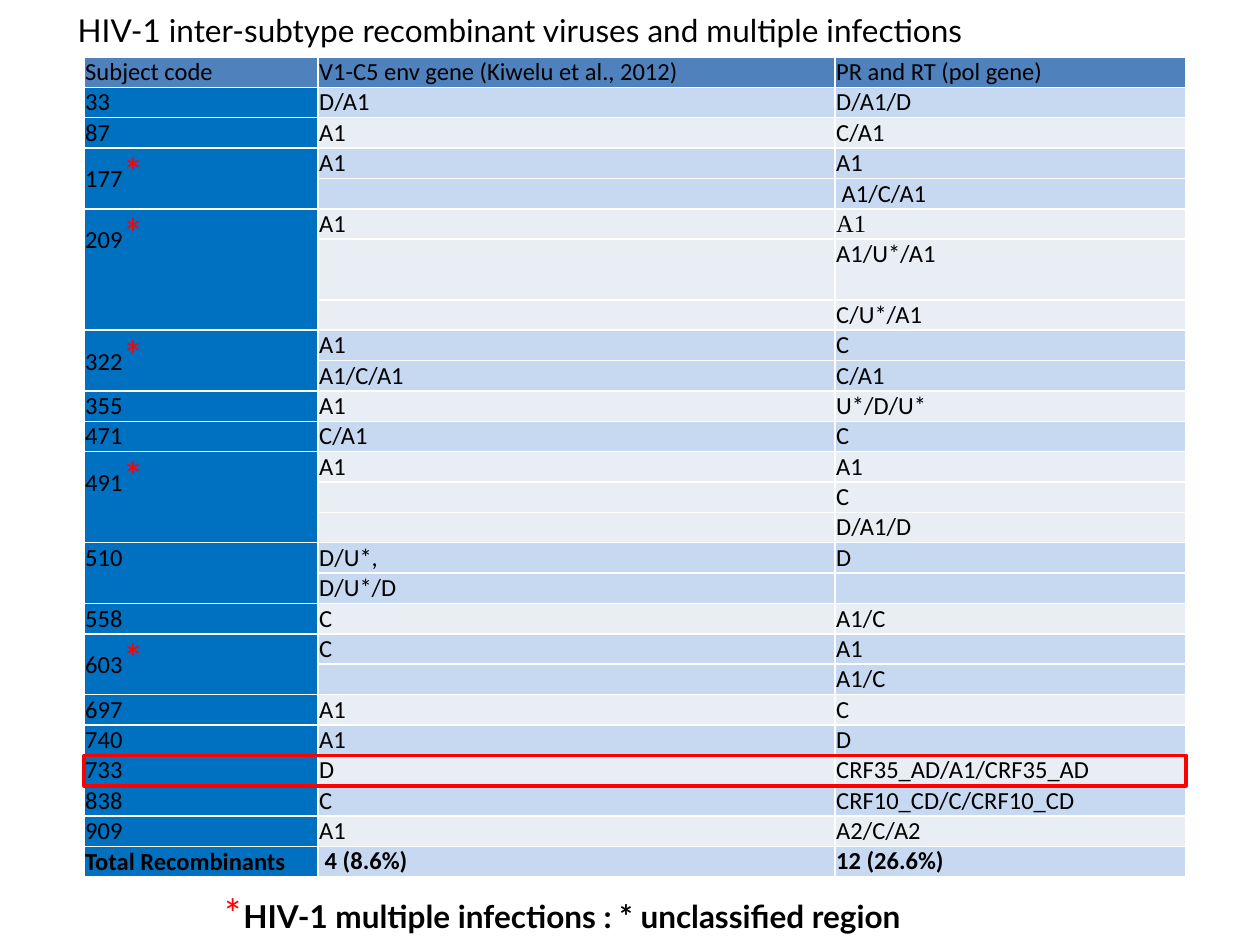
from dataclasses import dataclass
from lxml.etree import SubElement
from pptx import Presentation
from pptx.dml.color import RGBColor as RGB
from pptx.enum.shapes import MSO_SHAPE as SHAPE
from pptx.enum.text import MSO_ANCHOR as ANCHOR, MSO_AUTO_SIZE as FIT, PP_ALIGN as ALIGN
from pptx.oxml.ns import qn
from pptx.util import Emu, Inches, Pt

# Content: subject, starred as a multiple infection, (env, pol) rows
TITLE = "HIV-1 inter-subtype recombinant viruses and multiple infections"
NOTE = "HIV-1 multiple infections : * unclassified region"
HEAD = ("Subject code", "V1-C5 env gene (Kiwelu et al., 2012)", "PR and RT (pol gene)")
SUBJECTS = [
    ("33", False, [("D/A1", "D/A1/D")]),
    ("87", False, [("A1", "C/A1")]),
    ("177", True, [("A1", "A1"), ("", " A1/C/A1")]),
    ("209", True, [("A1", "A1"), ("", "A1/U*/A1"), ("", "C/U*/A1")]),
    ("322", True, [("A1", "C"), ("A1/C/A1", "C/A1")]),
    ("355", False, [("A1", "U*/D/U*")]),
    ("471", False, [("C/A1", "C")]),
    ("491", True, [("A1", "A1"), ("", "C"), ("", "D/A1/D")]),
    ("510", False, [("D/U*,", "D"), ("D/U*/D", "")]),
    ("558", False, [("C", "A1/C")]),
    ("603", True, [("C", "A1"), ("", "A1/C")]),
    ("697", False, [("A1", "C")]),
    ("740", False, [("A1", "D")]),
    ("733", False, [("D", "CRF35_AD/A1/CRF35_AD")]),
    ("838", False, [("C", "CRF10_CD/C/CRF10_CD")]),
    ("909", False, [("A1", "A2/C/A2")]),
    ("Total Recombinants", False, [(" 4 (8.6%)", "12 (26.6%)")]),
]
MARKED = "733"  # subject with a frame around it
TALL = 6        # row of double height
SERIF = (5, 2)  # cell set in the serif font


@dataclass(frozen=True)
class Theme:
    ink: str = "000000"
    red: str = "FF0000"
    rule: str = "FFFFFF"
    head: str = "4F81BD"
    code: str = "0070C0"
    bands: tuple = ("C6D9F1", "E9EDF4")
    font: str = "Calibri"
    lead: str = "Lato"
    serif: str = "Times New Roman"
    cell: int = 14
    text: int = 18
    star: int = 24


T = Theme()
LEFT, TOP, WIDTH, HEIGHT = 84, 57, 1102, 820
COLS = (234, 517, 351)


def px(n):
    return Emu(n * 914400 // 126)


def box(*sides):
    return [px(n) for n in sides]


def add_run(para, text, size, font=T.font, color=T.ink, bold=False):
    run = para.add_run()
    run.text = text
    face = run.font
    face.size, face.name, face.bold = Pt(size), font, bold
    face.color.rgb = RGB.from_string(color)


def style(cell, fill):
    """Set margins, borders, fill and the line height of an empty cell."""
    cell.margin_left = cell.margin_right = Inches(0.01)
    cell.margin_top = cell.margin_bottom = 0
    cell.vertical_anchor = ANCHOR.MIDDLE
    props = cell._tc.get_or_add_tcPr()
    for side in "LRTB":
        line = SubElement(props, qn(f"a:ln{side}"), w=str(Pt(1)))
        solid = SubElement(line, qn("a:solidFill"))
        SubElement(solid, qn("a:srgbClr"), val=T.rule)
    cell.fill.solid()
    cell.fill.fore_color.rgb = RGB.from_string(fill)
    end = cell.text_frame.paragraphs[0]._p.get_or_add_endParaRPr()
    end.set("sz", str(T.cell * 100))


def write(cell, text, **look):
    if text:
        add_run(cell.text_frame.paragraphs[0], text, T.cell, **look)


def add_grid(slide):
    """Build the table; return the top and height of the marked row."""
    count = 1 + sum(len(rows) for _, _, rows in SUBJECTS)
    frame = slide.shapes.add_table(count, len(COLS), *box(LEFT, TOP, WIDTH, HEIGHT))
    grid = frame.table
    grid.first_row = grid.horz_banding = False
    for col, wide in zip(grid.columns, COLS):
        col.width = px(wide)
    unit = px(HEIGHT) // (count + 1)
    highs = [unit * 2 if i == TALL else unit for i in range(count)]
    for row, high in zip(grid.rows, highs):
        row.height = Emu(high)

    # Header
    for c, text in enumerate(HEAD):
        style(grid.cell(0, c), T.head)
        write(grid.cell(0, c), text)

    # One band per subject
    r = 1
    for n, (code, star, rows) in enumerate(SUBJECTS):
        last = n == len(SUBJECTS) - 1
        first = grid.cell(r, 0)
        for i, pair in enumerate(rows, r):
            style(grid.cell(i, 0), T.code)
            for c, text in enumerate(pair, 1):
                cell = grid.cell(i, c)
                style(cell, T.bands[n % 2])
                write(cell, text, bold=last, font=T.serif if (i, c) == SERIF else T.font)
                if i == TALL:
                    cell.vertical_anchor = ANCHOR.TOP
        write(first, code, bold=last)
        if star:
            add_run(first.text_frame.paragraphs[0], "*", T.star, color=T.red)
        if len(rows) > 1:
            first.merge(grid.cell(r + len(rows) - 1, 0))
            first.vertical_anchor = ANCHOR.TOP
        elif last:
            first.vertical_anchor = ANCHOR.BOTTOM
        if code == MARKED:
            spot = Emu(px(TOP) + sum(highs[:r])), Emu(highs[r])
        r += len(rows)
    return spot


def main():
    deck = Presentation()
    deck.slide_width, deck.slide_height = Inches(10), Inches(7.5)
    slide = deck.slides.add_slide(deck.slide_layouts[5])
    top, high = add_grid(slide)

    # Title
    title = slide.shapes.title
    title.left, title.top, title.width, title.height = box(58, 5, 1071, 50)
    frame = title.text_frame
    frame.auto_size, frame.vertical_anchor = FIT.NONE, ANCHOR.TOP
    para = frame.paragraphs[0]
    para.alignment = ALIGN.LEFT
    add_run(para, " ", T.text)
    add_run(para, TITLE, T.text, T.lead)

    # Frame around the marked subject
    mark = slide.shapes.add_shape(SHAPE.RECTANGLE, px(LEFT), top, px(WIDTH), high)
    mark.shadow.inherit = False
    mark.fill.background()
    mark.line.color.rgb = RGB.from_string(T.red)
    mark.line.width = Pt(2)

    # Note under the table
    note = slide.shapes.add_textbox(*box(210, 880, 750, 63)).text_frame
    note.word_wrap, note.auto_size = False, FIT.SHAPE_TO_FIT_TEXT
    para = note.paragraphs[0]
    add_run(para, "*", T.star, color=T.red)
    add_run(para, NOTE, T.text, T.lead, bold=True)

    deck.save("out.pptx")


if __name__ == "__main__":
    main()
